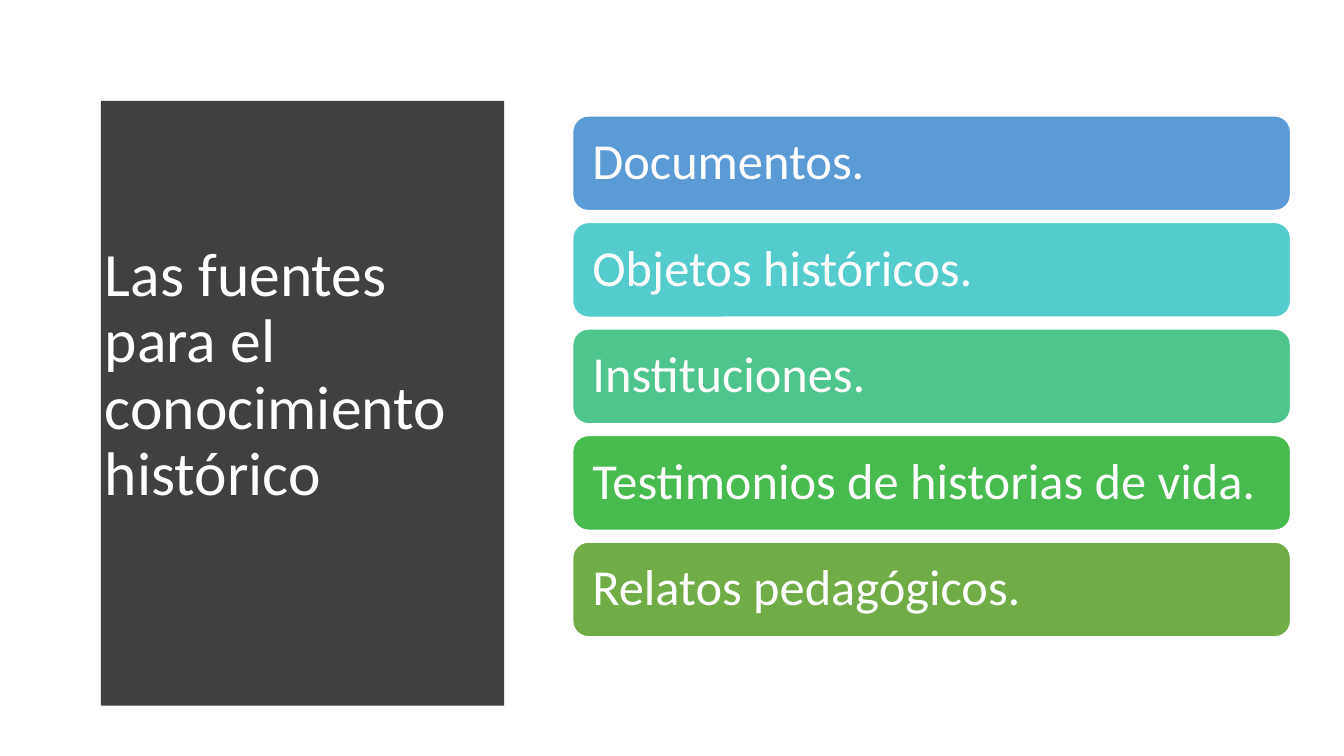
import pptx
import pptx.util
import pptx.dml.color
import pptx.enum.shapes
import pptx.enum.text

Inches = pptx.util.Inches


def color(value):
    return pptx.dml.color.RGBColor.from_string(value)


def write(shape, text, size, inset_x, inset_y):
    """Put one left-aligned, vertically centred white paragraph in the shape."""
    tf = shape.text_frame
    frame_format = {
        "word_wrap": True,
        "auto_size": pptx.enum.text.MSO_AUTO_SIZE.NONE,
        "vertical_anchor": pptx.enum.text.MSO_ANCHOR.MIDDLE,
        "margin_left": Inches(inset_x),
        "margin_right": Inches(inset_x),
        "margin_top": Inches(inset_y),
        "margin_bottom": Inches(inset_y),
    }
    for name, value in frame_format.items():
        setattr(tf, name, value)
    p = tf.paragraphs[0]
    p.alignment = pptx.enum.text.PP_ALIGN.LEFT
    p.line_spacing = 0.9
    r = p.add_run()
    r.text = text
    for name, value in {"name": "Calibri", "size": pptx.util.Pt(size)}.items():
        setattr(r.font, name, value)
    r.font.color.rgb = color("FFFFFF")


prs = pptx.Presentation()
prs.slide_width = Inches(13.33)
prs.slide_height = Inches(7.5)
s = prs.slides.add_slide(prs.slide_layouts[5])

# Dark panel whose right edge bulges as a parabola
left, top, bottom = 0.53, 0.52, 6.96
corner, bulge, steps = 5.08, 0.24, 40
edge = []
for i in range(steps + 1):
    t = i / steps
    x = corner + bulge * (1 - (2 * t - 1) ** 2)
    edge.append((x, top + (bottom - top) * t))
builder = s.shapes.build_freeform(left, top, scale=Inches(1))
builder.add_line_segments(edge + [(left, bottom)], close=True)
panel = builder.convert_to_shape()
panel.shadow.inherit = False
panel.fill.solid()
panel.fill.fore_color.rgb = color("404040")
panel.line.fill.background()

# Title, brought in front of the panel
title = s.shapes.title
s.shapes._spTree.append(title._element)
title_box = {"left": 0.94, "top": 1.11, "width": 3.74, "height": 5.24}
for name, value in title_box.items():
    setattr(title, name, Inches(value))
write(title, "Las fuentes para el conocimiento histórico", 44, 0.1, 0.05)

# Source bars
sources = [
    ("Documentos.", "5B9BD5"),
    ("Objetos históricos.", "54CCCD"),
    ("Instituciones.", "4DC58D"),
    ("Testimonios de historias de vida.", "48BB4F"),
    ("Relatos pedagógicos.", "70AD47"),
]
first_top, pitch = 1.15, 1.057
for i, (text, fill) in enumerate(sources):
    sp = s.shapes.add_shape(
        pptx.enum.shapes.MSO_SHAPE.ROUNDED_RECTANGLE,
        Inches(5.68), Inches(first_top + i * pitch), Inches(7.12), Inches(0.94))
    sp.shadow.inherit = False
    sp.fill.solid()
    sp.fill.fore_color.rgb = color(fill)
    sp.line.color.rgb = color("FFFFFF")
    sp.line.width = pptx.util.Pt(1)
    write(sp, text, 36, 0.15, 0)

prs.save("out.pptx")
